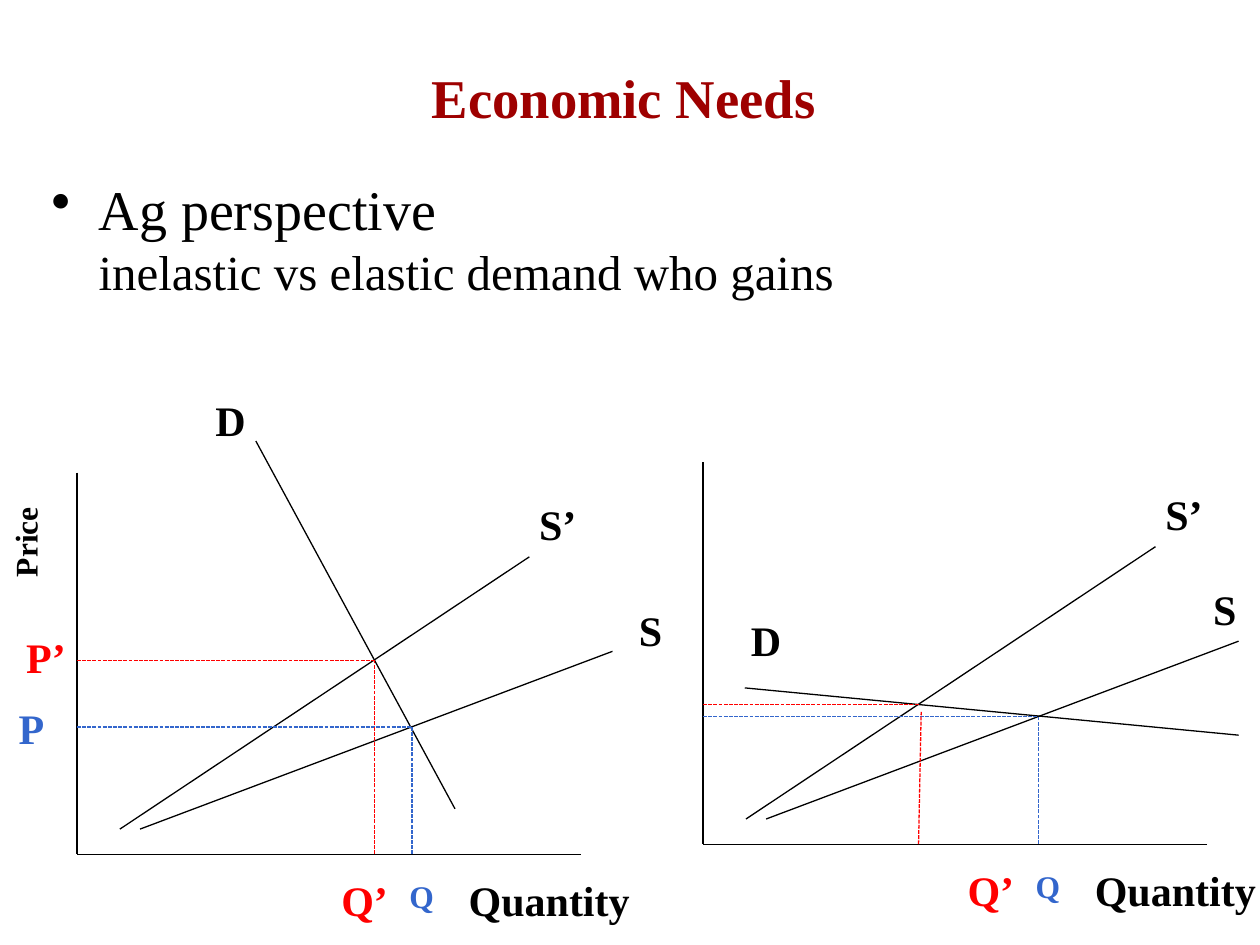
from dataclasses import dataclass

from lxml import etree
from pptx import Presentation
from pptx.dml.color import RGBColor
from pptx.enum import dml, shapes, text
from pptx.oxml import ns
from pptx.util import Pt


@dataclass(frozen=True)
class Theme:
    font: str = "Times New Roman"
    ink: str = "000000"
    title: str = "9E0000"
    before: str = "3366CC"
    after: str = "FF0000"
    title_size: float = 31.2
    body_size: float = 32
    sub_size: float = 28
    label_size: float = 24
    small_size: float = 18
    line: float = 0.75


T = Theme()


def style(r, size, color, bold):
    r.font.name = T.font
    r.font.size = Pt(size)
    r.font.bold = bold
    r.font.color.rgb = RGBColor.from_string(color)


def add_text(s, box, content, sizes, color=T.ink, bold=True):
    sp = s.shapes.add_textbox(*(Pt(v) for v in box))
    tf = sp.text_frame
    tf.word_wrap = True
    tf.vertical_anchor = text.MSO_ANCHOR.MIDDLE
    tf.text = content
    for r, size in zip(tf.paragraphs[0].runs, sizes):
        style(r, size, color, bold)
    return tf


def add_label(s, box, content, color=T.ink, size=T.label_size):
    tf = add_text(s, box, content, [size], color)
    tf.word_wrap = False
    tf.auto_size = text.MSO_AUTO_SIZE.SHAPE_TO_FIT_TEXT
    tf.vertical_anchor = text.MSO_ANCHOR.TOP
    return tf


def add_line(s, start, end, color=T.ink, dashed=False):
    c = s.shapes.add_connector(
        shapes.MSO_CONNECTOR.STRAIGHT, *(Pt(v) for v in (*start, *end)))
    c.line.width = Pt(T.line)
    c.line.color.rgb = RGBColor.from_string(color)
    if dashed:
        c.line.dash_style = dml.MSO_LINE.SQUARE_DOT
    etree.SubElement(c._element.spPr, ns.qn("a:effectLst"))


def add_title(s, box):
    tf = add_text(s, box, "Economic Needs", [T.title_size], T.title)
    tf.paragraphs[0].alignment = text.PP_ALIGN.CENTER


def add_body(s, box):
    tf = add_text(s, box, "Ag perspective\vinelastic vs elastic demand who gains",
                  [T.body_size, T.sub_size], bold=False)
    pPr = tf.paragraphs[0]._p.get_or_add_pPr()
    pPr.set("marL", str(Pt(27)))
    pPr.set("indent", str(-Pt(27)))
    etree.SubElement(pPr, ns.qn("a:buChar"), char="•")


def add_market(s, box, demand, d_label, s_label, price, quantity, drop_top):
    x, y, w, h = box

    def at(dx, dy):
        return x + dx, y + dy

    for start, end in [
        ((0, 0), (0, h)),
        ((w, h), (0, h)),
        ((24.5, h - 14.4), (258.5, h - 170)),
        ((36, h - 14.4), (306, h - 116)),
        demand,
    ]:
        add_line(s, at(*start), at(*end))

    for start, end, color in [
        ((0, 145.4), (191, 145.4), T.before),
        ((191.5, h), (191.5, 145.4), T.before),
        ((0, price), (quantity, price), T.after),
        ((quantity, h), drop_top, T.after),
    ]:
        add_line(s, at(*start), at(*end), color, True)

    for pos, width, content, color in [
        (d_label, 32.4, "D", T.ink),
        (s_label, 28, "S", T.ink),
        ((257, 11.5), 36, "S’", T.ink),
        ((216.7, h + 8), 107.3, "Quantity", T.ink),
        ((144, h + 8), 41, "Q’", T.after),
    ]:
        add_label(s, (*at(*pos), width, 36.7), content, color)
    add_label(s, (*at(182.9, h + 9.4), 28.8, 28.8), "Q", T.before, T.small_size)


def add_price_labels(s, box):
    x, y, w, h = box
    tf = add_label(s, (x, y, 36, 47.5), "Price", size=T.small_size)
    tf._txBody.bodyPr.set("vert", "vert270")
    add_label(s, (x + 7.9, y + 67.7, 37.4, 36.7), "P’", T.after)
    add_label(s, (x + 3.6, y + 108.7, 29.5, 36.7), "P", T.before)


def main():
    prs = Presentation()
    prs.slide_width, prs.slide_height = Pt(720), Pt(540)
    s = prs.slides.add_slide(prs.slide_layouts[6])
    add_body(s, (22.3, 95.8, 612, 80))
    add_title(s, (32.4, 28.8, 648, 52.6))
    add_market(s, (44, 270, 288, 218.2), demand=((102.2, -18), (216, 192.2)),
               d_label=(72, -48.2), s_label=(314, 72), price=107.3,
               quantity=170, drop_top=(170, 107.3))
    add_price_labels(s, (0, 289.4, 44, 145.4))
    add_market(s, (401.8, 264.2, 288, 218.2), demand=((23.8, 128.9), (306, 155.9)),
               d_label=(20.2, 83.5), s_label=(284.4, 65.5), price=138.2,
               quantity=123.1, drop_top=(124.6, 142.6))
    prs.save("out.pptx")


if __name__ == "__main__":
    main()
